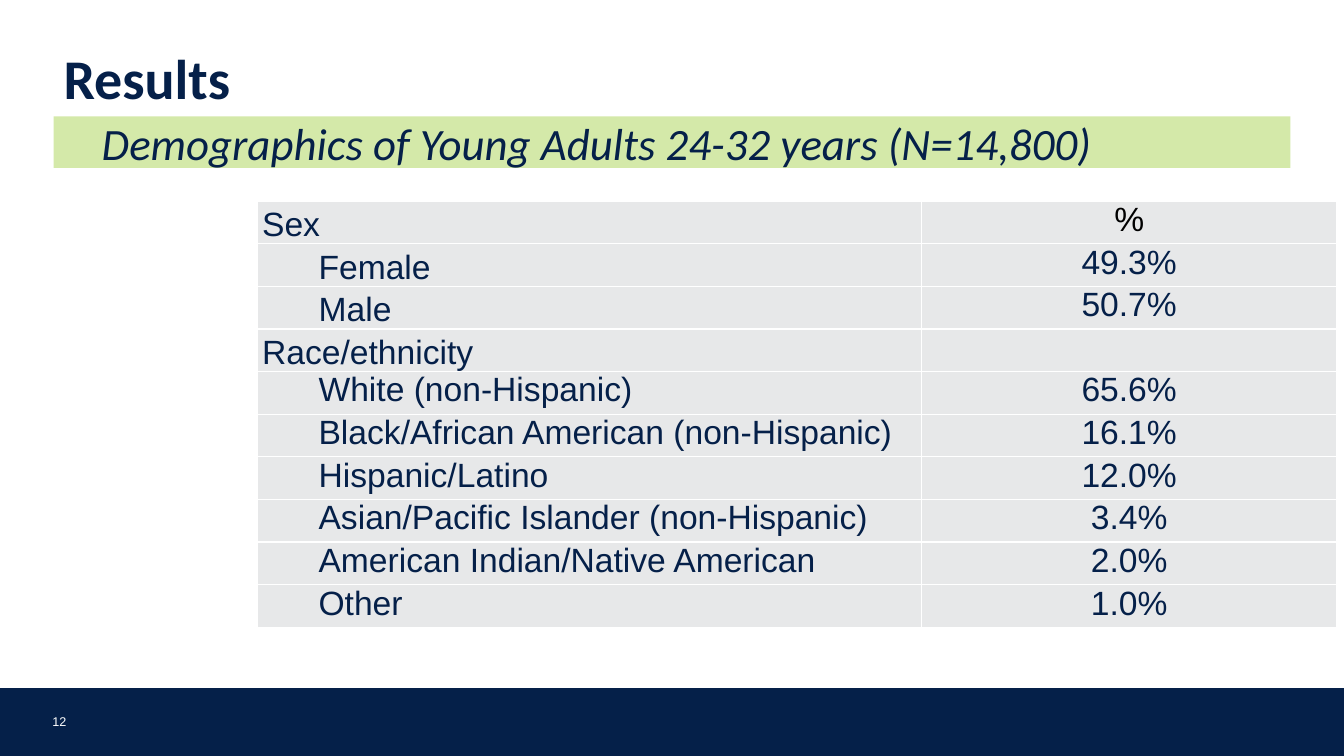
from lxml.etree import SubElement
from pptx import Presentation
from pptx.dml.color import RGBColor
from pptx.enum.shapes import MSO_SHAPE as Preset
from pptx.enum.text import MSO_ANCHOR as Anchor, MSO_AUTO_SIZE as AutoSize, PP_ALIGN as Align
from pptx.oxml.ns import qn
from pptx.util import Inches, Pt

NAVY = RGBColor(0x05, 0x20, 0x49)
GREEN = RGBColor(0xD4, 0xE9, 0xA9)
GRAY = RGBColor(0xE7, 0xE8, 0xE9)
WHITE = RGBColor(0xFF, 0xFF, 0xFF)
BLACK = RGBColor(0x00, 0x00, 0x00)

DEMOGRAPHICS = [
    ("Sex", "%"),
    ("Female", "49.3%"),
    ("Male", "50.7%"),
    ("Race/ethnicity", ""),
    ("White (non-Hispanic)", "65.6%"),
    ("Black/African American (non-Hispanic)", "16.1%"),
    ("Hispanic/Latino", "12.0%"),
    ("Asian/Pacific Islander (non-Hispanic)", "3.4%"),
    ("American Indian/Native American", "2.0%"),
    ("Other", "1.0%"),
]
HEADINGS = ("Sex", "Race/ethnicity")


def write_text(frame, text, font="Arial", size=24, color=NAVY, bold=False, italic=False,
               align=Align.LEFT, line_spacing=None, left_margin=0, first_indent=0):
    """Write one formatted paragraph into a text frame."""
    paragraph = frame.paragraphs[0]
    paragraph.alignment = align
    paragraph.line_spacing = line_spacing
    properties = paragraph._p.get_or_add_pPr()
    properties.set("marL", str(Inches(left_margin)))
    properties.set("indent", str(Inches(first_indent)))
    run = paragraph.add_run()
    run.text = text
    run.font.name, run.font.size = font, Pt(size)
    run.font.bold, run.font.italic = bold, italic
    run.font.color.rgb = color


def set_margins(target, left=0.0, top=0.0, right=0.0, bottom=0.0):
    """Set the inner margins of a text frame or a cell in inches."""
    target.margin_left, target.margin_top = Inches(left), Inches(top)
    target.margin_right, target.margin_bottom = Inches(right), Inches(bottom)


def set_borders(cell, color, width):
    """Draw a solid line on all four sides of a cell."""
    properties = cell._tc.get_or_add_tcPr()
    for side in ("a:lnL", "a:lnR", "a:lnT", "a:lnB"):
        line = SubElement(properties, qn(side), w=str(Pt(width)))
        fill = SubElement(line, qn("a:solidFill"))
        SubElement(fill, qn("a:srgbClr"), val=str(color))


class SlideBuilder:
    """Holds the slide and places elements by percentages of its size."""

    def __init__(self, presentation):
        """Add a title-only slide."""
        self.width, self.height = presentation.slide_width, presentation.slide_height
        self.slide = presentation.slides.add_slide(presentation.slide_layouts[5])
        self.shapes = self.slide.shapes

    def area(self, left, top, width, height):
        """Turn percentages of the slide into lengths."""
        return (int(self.width * left / 100), int(self.height * top / 100),
                int(self.width * width / 100), int(self.height * height / 100))

    def title(self, text, *area):
        """Move and fill the title placeholder."""
        title = self.shapes.title
        title.left, title.top, title.width, title.height = self.area(*area)
        frame = title.text_frame
        frame.word_wrap, frame.auto_size = True, AutoSize.SHAPE_TO_FIT_TEXT
        frame.vertical_anchor = Anchor.TOP
        write_text(frame, text, font="Calibri", size=40, bold=True, line_spacing=0.85)

    def bar(self, color, *area):
        """Add a flat rectangle."""
        shape = self.shapes.add_shape(Preset.RECTANGLE, *self.area(*area))
        shape.shadow.inherit = False
        shape.fill.solid()
        shape.fill.fore_color.rgb = color
        shape.line.fill.background()
        return shape

    def banner(self, text, *area):
        """Add the green subtitle bar."""
        frame = self.bar(GREEN, *area).text_frame
        frame.word_wrap, frame.vertical_anchor = True, Anchor.TOP
        write_text(frame, text, font="Calibri", size=32, italic=True,
                   line_spacing=0.9, first_indent=0.38)

    def footer(self, number, *area):
        """Add the navy footer with the slide number."""
        bar = self.bar(NAVY, 0, 91.2, 100, 8.8)
        bar.line.color.rgb, bar.line.width = NAVY, Pt(1.5)
        frame = self.shapes.add_textbox(*self.area(*area)).text_frame
        frame.word_wrap, frame.vertical_anchor = True, Anchor.BOTTOM
        set_margins(frame)
        write_text(frame, number, size=9, color=WHITE)

    def table(self, rows, label_share, *area):
        """Add the table of labels and percentages."""
        frame = self.shapes.add_table(len(rows), 2, *self.area(*area))
        table = frame.table
        table.first_row = table.horz_banding = False
        table.columns[0].width = int(frame.width * label_share)
        table.columns[1].width = frame.width - table.columns[0].width
        for index, (label, value) in enumerate(rows):
            label_cell, value_cell = table.cell(index, 0), table.cell(index, 1)
            for cell in (label_cell, value_cell):
                set_margins(cell)
                set_borders(cell, WHITE, 1)
                cell.fill.solid()
                cell.fill.fore_color.rgb = GRAY
            heading = label in HEADINGS
            label_cell.margin_left = Inches(0.05 if heading else 0.11)
            label_cell.vertical_anchor = Anchor.BOTTOM if index < 4 else Anchor.TOP
            write_text(label_cell.text_frame, label, left_margin=0 if heading else 0.5)
            if value:
                write_text(value_cell.text_frame, value, align=Align.CENTER,
                           color=BLACK if value == "%" else NAVY)


def main():
    """Build and save the slide."""
    presentation = Presentation()
    presentation.slide_width, presentation.slide_height = Inches(13.33), Inches(7.5)
    builder = SlideBuilder(presentation)
    builder.footer("12", 3.9, 94.13, 2.7, 2.27)
    builder.table(DEMOGRAPHICS, 0.8, 19.13, 26.6, 61.8, 56.4)
    builder.banner("Demographics of Young Adults 24-32 years (N=14,800)", 3.98, 15.4, 92.04, 6.8)
    builder.title("Results", 3.98, 6.4, 66.4, 9.07)
    presentation.save("out.pptx")


if __name__ == "__main__":
    main()
